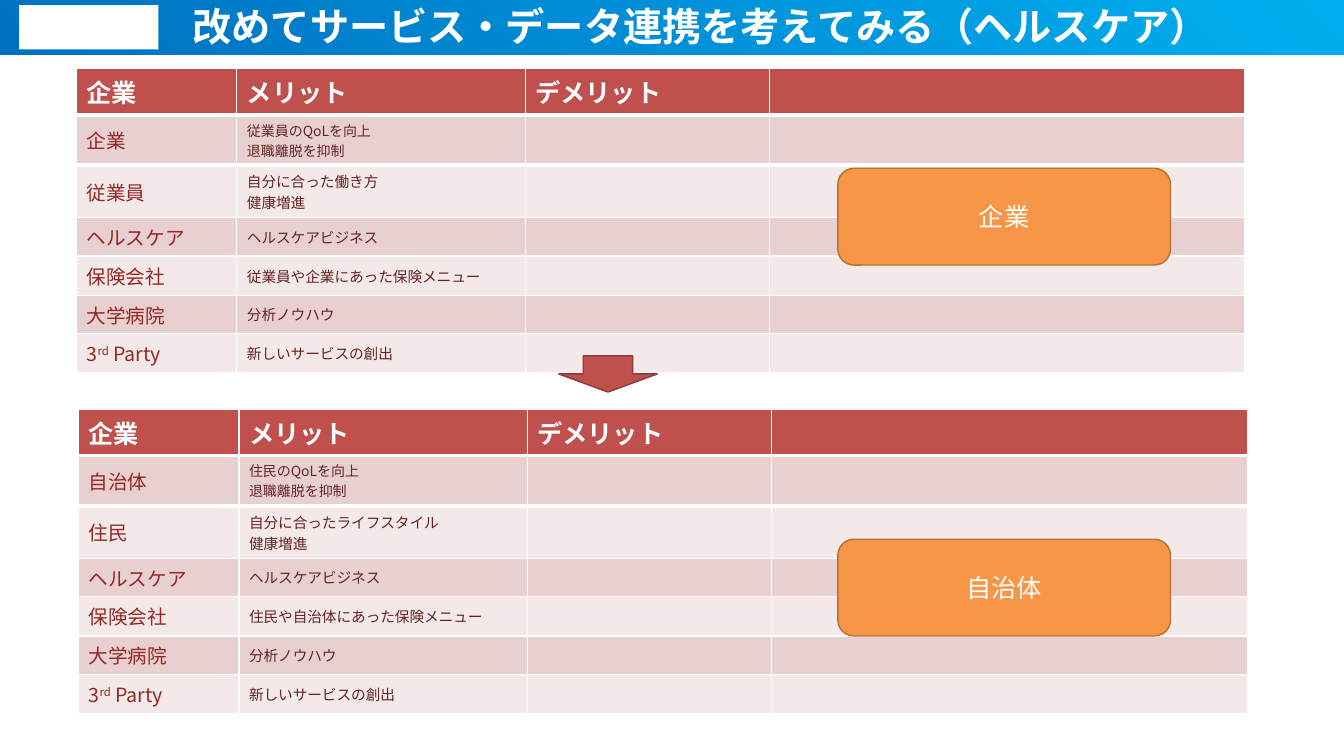
from lxml.etree import SubElement
from pptx import Presentation
from pptx.dml.color import RGBColor
from pptx.enum.shapes import MSO_SHAPE as Preset
from pptx.enum.text import MSO_ANCHOR as Anchor, PP_ALIGN as Align
from pptx.oxml.ns import qn
from pptx.util import Pt

FONT = "Noto Sans CJK JP"
HEADINGS = ["企業", "メリット", "デメリット", ""]
COLUMN_WIDTHS = [159, 286, 242, 472]
ROW_HEIGHTS = [46, 50, 52, 38, 39, 38, 39]
BANDS = ["F4E9E9", "E8D0D0"]


def px(length):
    return length * 9144


def color(hex_string):
    return RGBColor.from_string(hex_string)


def style(paragraph, size, hex_string, bold=False):
    font = paragraph.font
    font.name = FONT
    font.size = Pt(size)
    font.bold = bold
    font.color.rgb = color(hex_string)
    east_asian = SubElement(font._element, qn("a:ea"))
    east_asian.set("typeface", FONT)


def add_block(slide, preset, box, fill=None, outline=None):
    block = slide.shapes.add_shape(preset, *map(px, box))
    block.shadow.inherit = False
    if fill:
        block.fill.solid()
        block.fill.fore_color.rgb = color(fill)
    if outline:
        block.line.color.rgb = color(outline)
        block.line.width = Pt(1)
    else:
        block.line.fill.background()
    return block


def add_header(slide, box, title):
    left, top, width, height = box
    banner = add_block(slide, Preset.RECTANGLE, box)
    banner.fill.gradient()
    banner.fill.gradient_angle = 225
    for stop, shade in zip(banner.fill.gradient_stops, ["00B0F0", "0070C0"]):
        stop.color.rgb = color(shade)
    add_block(slide, Preset.RECTANGLE, (left + 19, top + 5, 138, height - 10), "FFFFFF")

    heading = slide.shapes.add_textbox(px(left + 152), px(top + 5), px(1084), px(47))
    frame = heading.text_frame
    frame.word_wrap = True
    frame.vertical_anchor = Anchor.MIDDLE
    frame.margin_left = px(39)
    frame.margin_top = frame.margin_right = frame.margin_bottom = 0
    paragraph = frame.paragraphs[0]
    paragraph.text = title
    paragraph.line_spacing = 0.9
    style(paragraph, 28, "FFFFFF", bold=True)


def add_border(cell, side, width):
    properties = cell._tc.get_or_add_tcPr()
    border = properties.makeelement(qn(f"a:{side}"), {"w": str(Pt(width))})
    properties.insert(0, border)
    fill = SubElement(border, qn("a:solidFill"))
    SubElement(fill, qn("a:srgbClr")).set("val", "FFFFFF")


def fill_cell(cell, text, fill, size, text_color, bold=False):
    cell.fill.solid()
    cell.fill.fore_color.rgb = color(fill)
    cell.text = text
    for paragraph in cell.text_frame.paragraphs:
        style(paragraph, size, text_color, bold)
        if not text:
            end = SubElement(paragraph._p, qn("a:endParaRPr"))
            end.set("sz", str(int(size * 100)))


def add_ordinal_party(cell):
    paragraph = cell.text_frame.paragraphs[0]
    for text, baseline in [("3", 0), ("rd", 30000), (" Party", 0)]:
        run = paragraph.add_run()
        run.text = text
        if baseline:
            run.font._element.set("baseline", str(baseline))
    style(paragraph, 14, "942825")


def add_merit_table(slide, box, organization, member, lifestyle):
    merits = [
        (organization, f"{member}のQoLを向上\n退職離脱を抑制"),
        (member, f"自分に合った{lifestyle}\n健康増進"),
        ("ヘルスケア", "ヘルスケアビジネス"),
        ("保険会社", f"{member}や{organization}にあった保険メニュー"),
        ("大学病院", "分析ノウハウ"),
        ("", "新しいサービスの創出"),
    ]
    graphic = slide.shapes.add_table(len(merits) + 1, len(HEADINGS), *map(px, box))
    table = graphic.table
    table.horz_banding = False
    for column, width in zip(table.columns, COLUMN_WIDTHS):
        column.width = px(width)
    for row, height in zip(table.rows, ROW_HEIGHTS):
        row.height = px(height)

    for index, heading in enumerate(HEADINGS):
        cell = table.cell(0, index)
        fill_cell(cell, heading, "C0504D", 18, "FFFFFF", bold=True)
        add_border(cell, "lnB", 3)
        add_border(table.cell(1, index), "lnT", 3)
    for number, (party, merit) in enumerate(merits, 1):
        band = BANDS[number % 2]
        merit_size = 10 if number == 1 else 10.5
        cells = [table.cell(number, index) for index in range(len(HEADINGS))]
        fill_cell(cells[1], merit, band, merit_size, "632523")
        for empty_cell in cells[2:]:
            fill_cell(empty_cell, "", band, 10.5, "632523")
        if party:
            fill_cell(cells[0], party, band, 14, "942825")
        else:
            cells[0].fill.solid()
            cells[0].fill.fore_color.rgb = color(band)
            add_ordinal_party(cells[0])
        for cell in cells:
            cell.vertical_anchor = Anchor.MIDDLE


def add_organization_label(slide, box, organization):
    label = add_block(slide, Preset.ROUNDED_RECTANGLE, box, "F79646", "B76F34")
    frame = label.text_frame
    frame.vertical_anchor = Anchor.MIDDLE
    paragraph = frame.paragraphs[0]
    paragraph.text = organization
    paragraph.alignment = Align.CENTER
    style(paragraph, 18, "FFFFFF")


def main():
    deck = Presentation()
    deck.slide_width, deck.slide_height = px(1333), px(750)
    slide = deck.slides.add_slide(deck.slide_layouts[6])
    add_header(slide, (0, 0, 1333, 54), "改めてサービス・データ連携を考えてみる（ヘルスケア）")
    add_merit_table(slide, (76, 68, 1159, 302), "企業", "従業員", "働き方")
    add_block(slide, Preset.DOWN_ARROW, (554, 353, 98, 36), "C0504D", "8E3B39")
    add_merit_table(slide, (78, 406, 1159, 302), "自治体", "住民", "ライフスタイル")
    add_organization_label(slide, (831, 167, 330, 96), "企業")
    add_organization_label(slide, (831, 535, 330, 96), "自治体")
    deck.save("out.pptx")


if __name__ == "__main__":
    main()
